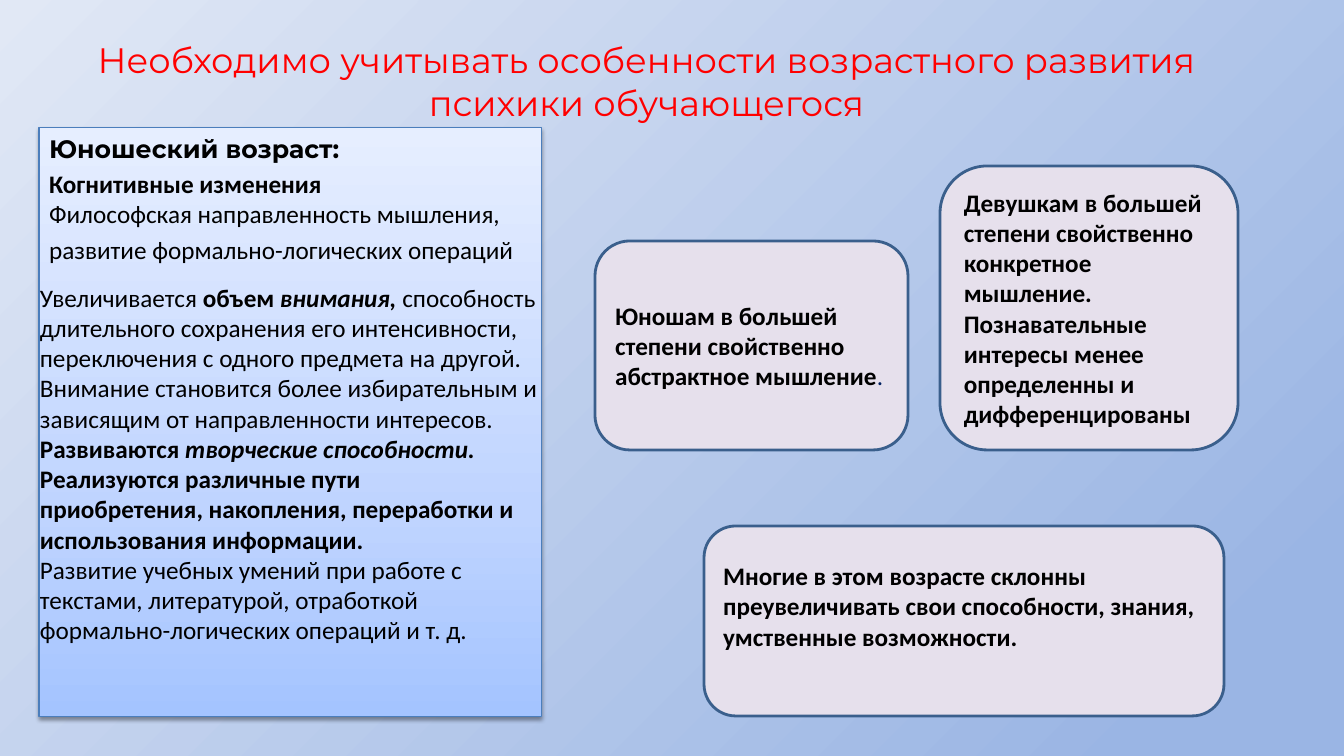
"""Build a slide on the mental development of adolescents."""
from dataclasses import dataclass

from lxml.etree import SubElement
from pptx import Presentation
from pptx.dml.color import RGBColor
from pptx.enum.shapes import MSO_SHAPE
from pptx.enum.text import MSO_ANCHOR, MSO_AUTO_SIZE, PP_ALIGN
from pptx.oxml.ns import qn
from pptx.util import Emu, Pt

WIDTH, HEIGHT = 1344, 756
EMU_PER_PX = 12192000 / WIDTH

BLACK = RGBColor(0x00, 0x00, 0x00)
RED = RGBColor(0xFF, 0x00, 0x00)
NAVY = RGBColor(0x00, 0x20, 0x60)
LILAC = RGBColor(0xE6, 0xE0, 0xEC)
STEEL = RGBColor(0x3A, 0x5F, 0x8C)
PANEL_EDGE = RGBColor(0x4B, 0x7E, 0xBC)
BACKDROP_DARK = RGBColor(0x9A, 0xB5, 0xE4)
BACKDROP_LIGHT = RGBColor(0xE1, 0xE8, 0xF5)
PANEL_DARK = RGBColor(0xA4, 0xC4, 0xFF)
PANEL_MID = RGBColor(0xBF, 0xD4, 0xFF)
PANEL_LIGHT = RGBColor(0xE6, 0xEE, 0xFF)


@dataclass(frozen=True)
class Piece:
    text: str
    bold: bool = False
    italic: bool = False
    font: str = "Calibri"
    size: float = 18
    color: RGBColor = BLACK


@dataclass(frozen=True)
class Line:
    pieces: tuple[Piece, ...]
    space_before: float = 0


@dataclass(frozen=True)
class Box:
    left: int
    top: int
    width: int
    height: int


@dataclass(frozen=True)
class Card:
    box: Box
    lines: tuple[Line, ...]
    bottom_inset: int = 5


def bold_line(text: str) -> Line:
    return Line((Piece(text, bold=True),))


def plain_line(text: str, space_before: float = 0) -> Line:
    return Line((Piece(text),), space_before)


TITLE_BOX = Box(16, 30, 1261, 102)
TITLE = Line((Piece("Необходимо учитывать особенности возрастного развития психики обучающегося",
                    font="Montserrat", size=25.2, color=RED),))

PANEL_BOX = Box(39, 128, 503, 589)
PANEL_LINES = (
    Line((Piece("Юношеский возраст:", bold=True, font="Montserrat"),), 3.6),
    Line((Piece("Когнитивные изменения", bold=True),), 3.6),
    plain_line("Философская направленность мышления,"),
    plain_line("развитие формально-логических операций", 3.6),
)

ATTENTION_BOX = Box(30, 277, 529, 377)
ATTENTION_LINES = (
    Line((Piece("Увеличивается "), Piece("объем ", bold=True),
          Piece("внимания, ", bold=True, italic=True), Piece("способность"))),
    plain_line("длительного сохранения его интенсивности, переключения с одного предмета на другой."),
    plain_line("Внимание становится более избирательным и зависящим от направленности интересов."),
    Line((Piece("Развиваются ", bold=True),
          Piece("творческие способности.", bold=True, italic=True))),
    bold_line("Реализуются различные пути"),
    bold_line("приобретения, накопления, переработки и использования информации."),
    plain_line("Развитие учебных умений при работе с текстами, литературой, "
               "отработкой формально-логических операций и т. д."),
)

CARDS = (
    Card(Box(940, 166, 298, 284), (
        bold_line("Девушкам в большей степени свойственно конкретное мышление. "
                  "Познавательные интересы менее определенны и дифференцированы"),)),
    Card(Box(704, 526, 520, 190), (
        bold_line("Многие в этом возрасте склонны преувеличивать свои способности, знания,"),
        bold_line("умственные возможности.")), bottom_inset=35),
    Card(Box(595, 241, 313, 209), (
        Line((Piece("Юношам в большей степени свойственно абстрактное мышление", bold=True),
              Piece(".", color=NAVY))),)),
)


def px(length: int) -> Emu:
    return Emu(round(length * EMU_PER_PX))


def place(shape, box: Box) -> None:
    shape.left, shape.top = px(box.left), px(box.top)
    shape.width, shape.height = px(box.width), px(box.height)


def write(frame, lines: tuple[Line, ...], align=PP_ALIGN.LEFT) -> None:
    frame.word_wrap = True
    frame.auto_size = MSO_AUTO_SIZE.NONE
    for index, line in enumerate(lines):
        paragraph = frame.add_paragraph() if index else frame.paragraphs[0]
        paragraph.alignment = align
        paragraph.space_before = Pt(line.space_before)
        for piece in line.pieces:
            run = paragraph.add_run()
            run.text = piece.text
            run.font.name = piece.font
            run.font.size = Pt(piece.size)
            run.font.bold = piece.bold
            run.font.italic = piece.italic
            run.font.color.rgb = piece.color


def paint_gradient(fill, owner, stops: dict[int, RGBColor]):
    """Fill the owner with the given percent stops and return its gradient element."""
    fill.gradient()
    gradient = next(owner.iter(qn("a:gradFill")))
    for child in list(gradient):
        gradient.remove(child)
    stop_list = SubElement(gradient, qn("a:gsLst"))
    for percent, color in stops.items():
        stop = SubElement(stop_list, qn("a:gs"), pos=str(percent * 1000))
        SubElement(stop, qn("a:srgbClr"), val=str(color))
    return gradient


def paint_backdrop(slide) -> None:
    gradient = paint_gradient(slide.background.fill, slide.element,
                              {10: BACKDROP_DARK, 100: BACKDROP_LIGHT})
    circle = SubElement(gradient, qn("a:path"), path="circle")
    SubElement(circle, qn("a:fillToRect"), l="100000", t="100000")


def add_panel(panel) -> None:
    place(panel, PANEL_BOX)
    gradient = paint_gradient(panel.fill, panel.element,
                              {0: PANEL_DARK, 35: PANEL_MID, 100: PANEL_LIGHT})
    SubElement(gradient, qn("a:lin"), ang="16200000", scaled="0")
    panel.line.color.rgb = PANEL_EDGE
    panel.line.width = Pt(0.75)
    effects = SubElement(panel.element.spPr, qn("a:effectLst"))
    shadow = SubElement(effects, qn("a:outerShdw"), blurRad=str(Pt(3.1)), dist=str(Pt(1.6)),
                        dir="5400000", rotWithShape="0")
    tint = SubElement(shadow, qn("a:srgbClr"), val=str(BLACK))
    SubElement(tint, qn("a:alpha"), val="38000")
    write(panel.text_frame, PANEL_LINES)
    for paragraph in panel.text_frame.paragraphs:
        properties = paragraph._p.get_or_add_pPr()
        properties.set("marL", "0")
        properties.set("indent", "0")
        SubElement(properties, qn("a:buNone"))


def add_card(slide, card: Card) -> None:
    outline = slide.shapes.add_shape(MSO_SHAPE.ROUNDED_RECTANGLE, 0, 0, 0, 0)
    place(outline, card.box)
    outline.shadow.inherit = False
    outline.fill.solid()
    outline.fill.fore_color.rgb = LILAC
    outline.line.color.rgb = STEEL
    outline.line.width = Pt(2)
    outline.text_frame.vertical_anchor = MSO_ANCHOR.MIDDLE
    outline.text_frame.margin_bottom = px(card.bottom_inset)
    write(outline.text_frame, card.lines)


def main() -> None:
    deck = Presentation()
    deck.slide_width, deck.slide_height = px(WIDTH), px(HEIGHT)
    slide = deck.slides.add_slide(deck.slide_layouts[1])
    paint_backdrop(slide)
    heading = slide.shapes.title
    place(heading, TITLE_BOX)
    heading.text_frame.vertical_anchor = MSO_ANCHOR.MIDDLE
    write(heading.text_frame, (TITLE,), PP_ALIGN.CENTER)
    add_panel(slide.placeholders[1])
    for card in CARDS:
        add_card(slide, card)
    attention = slide.shapes.add_textbox(0, 0, 0, 0)
    place(attention, ATTENTION_BOX)
    write(attention.text_frame, ATTENTION_LINES)
    deck.save("out.pptx")


if __name__ == "__main__":
    main()
